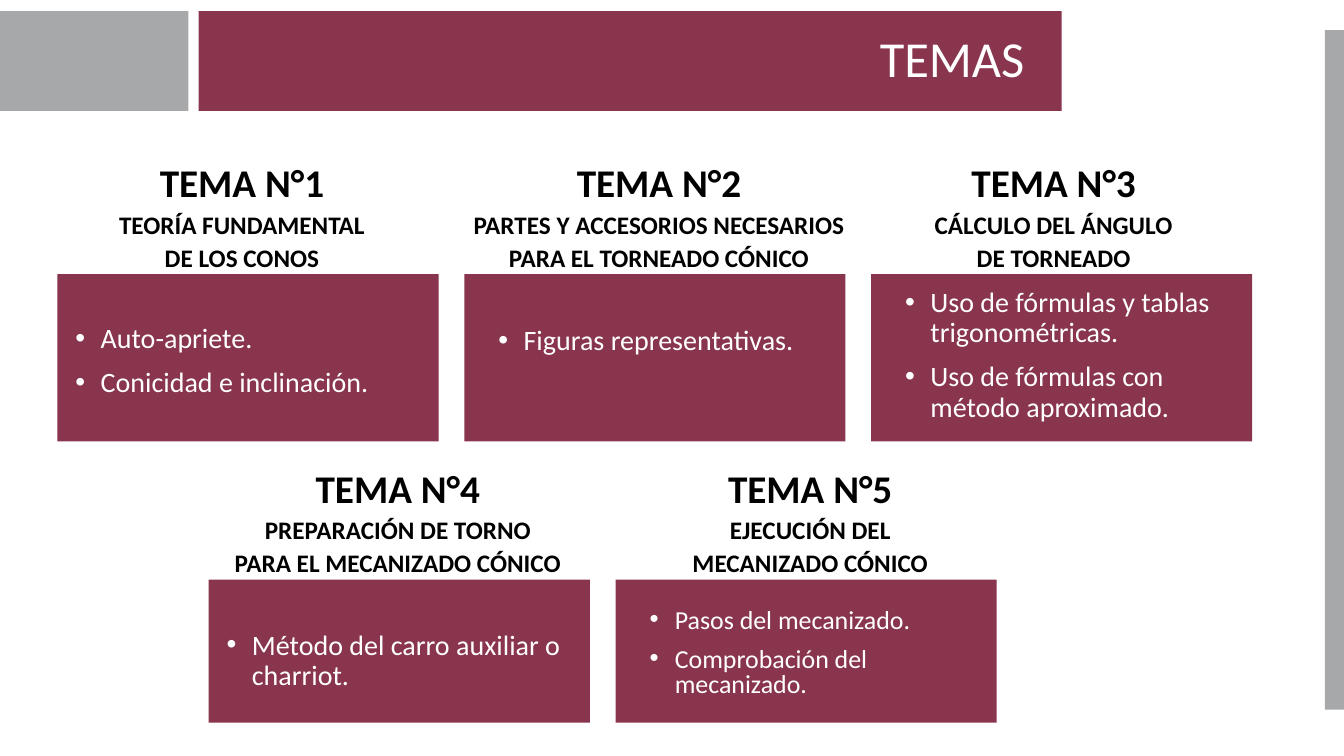
"""Build the course topics slide: a title bar and five topic cards."""
from lxml import etree
from pptx import Presentation
from pptx.dml.color import RGBColor
from pptx.enum.shapes import MSO_SHAPE
from pptx.enum.text import MSO_ANCHOR, MSO_AUTO_SIZE, PP_ALIGN
from pptx.oxml.ns import qn
from pptx.util import Inches, Pt

RECT = MSO_SHAPE.RECTANGLE
MIDDLE = MSO_ANCHOR.MIDDLE
GROW, FIXED = MSO_AUTO_SIZE.SHAPE_TO_FIT_TEXT, MSO_AUTO_SIZE.NONE
CENTER, LEFT, RIGHT = PP_ALIGN.CENTER, PP_ALIGN.LEFT, PP_ALIGN.RIGHT
WINE = RGBColor(0x88, 0x35, 0x4D)
GRAY = RGBColor(0xA7, 0xA8, 0xAA)
WHITE = RGBColor(0xFF, 0xFF, 0xFF)
BLACK = RGBColor(0, 0, 0)
FONT = "Calibri"

WIDE, HIGH = 13.33, 7.5
BAR_TOP, BAR_HIGH = 0.11, 0.99
COL, ROW = 4.035, 3.03
CARD_LEFT, CARD_TOP, CARD_WIDE = 0.57, 2.72, 3.78
HEAD_RISE, HEAD_HIGH = 1.24, 1.27
INDENT = 0.25
ROW_SHIFT = (0, 1.5)
ROW_HIGH = (1.66, 1.42)

# column, row, heading (shift, width), body (shift, drop, width, height), size, spacing, lines, items
TOPICS = [
    (0, 0, (0.35, 2.96), (0.08, 0.45, 3.63, 1.11), 20, 0.9,
     ["TEORÍA FUNDAMENTAL DE LOS CONOS"],
     ["Auto-apriete.", "Conicidad e inclinación."]),
    (1, 0, (-0.03, 3.92), (0.24, 0.47, 3.3, 0.72), 20, 0.9,
     ["PARTES Y ACCESORIOS NECESARIOS PARA EL TORNEADO CÓNICO"],
     ["Figuras representativas."]),
    (2, 0, (0.04, 3.54), (0.24, 0.09, 3.3, 1.56), 20, 0.9,
     ["CÁLCULO DEL ÁNGULO", "DE TORNEADO"],
     ["Uso de fórmulas y tablas trigonométricas.",
      "Uso de fórmulas con método aproximado."]),
    (0, 1, (0.15, 3.45), (0.08, 0.46, 3.63, 0.83), 20, 0.9,
     ["PREPARACIÓN DE TORNO PARA EL MECANIZADO CÓNICO"],
     ["Método del carro auxiliar o charriot."]),
    (1, 1, (-0.03, 3.92), (0.24, 0.25, 3.3, 1.04), 18.5, 0.8,
     ["EJECUCIÓN DEL", "MECANIZADO CÓNICO"],
     ["Pasos del mecanizado.", "Comprobación del mecanizado."]),
]


def add_block(left, top, wide, high, color):
    block = slide.shapes.add_shape(
        RECT, Inches(left), Inches(top), Inches(wide), Inches(high))
    block.shadow.inherit = False
    block.fill.solid()
    block.fill.fore_color.rgb = color
    block.line.fill.background()
    return block


def add_line(frame, index, text, size, color, bold, align, spacing):
    line = frame.paragraphs[0] if index == 0 else frame.add_paragraph()
    line.alignment = align
    line.line_spacing = spacing
    run = line.add_run()
    run.text = text
    run.font.name = FONT
    run.font.size = Pt(size)
    run.font.bold = bold
    run.font.color.rgb = color
    return line


deck = Presentation()
deck.slide_width, deck.slide_height = Inches(WIDE), Inches(HIGH)
slide = deck.slides.add_slide(deck.slide_layouts[5])

title = slide.shapes.title
title.left, title.top = Inches(2.16), Inches(0.33)
title.width, title.height = Inches(8.1), Inches(0.55)
frame = title.text_frame
frame.word_wrap = True
frame.auto_size = FIXED
frame.vertical_anchor = MIDDLE
add_line(frame, 0, "TEMAS", 36, WHITE, False, RIGHT, 0.9)

bar = add_block(1.97, BAR_TOP, 8.56, BAR_HIGH, WINE)
title.element.addprevious(bar.element)
add_block(0, BAR_TOP, 1.87, BAR_HIGH, GRAY)
add_block(WIDE - 0.19, 0.3, 0.19, 6.74, GRAY)

for number, topic in enumerate(TOPICS, 1):
    col, row, head, body, size, spacing, lines, items = topic
    left = CARD_LEFT + ROW_SHIFT[row] + col * COL
    top = CARD_TOP + row * ROW
    add_block(left, top, CARD_WIDE, ROW_HIGH[row], WINE)

    shift, drop, wide, high = body
    box = slide.shapes.add_textbox(
        Inches(left + shift), Inches(top + drop), Inches(wide), Inches(high))
    box.text_frame.word_wrap = True
    for index, item in enumerate(items):
        line = add_line(box.text_frame, index, item, size, WHITE, False, LEFT, spacing)
        line.space_before = Pt(10)
        props = line._p.get_or_add_pPr()
        props.set("marL", str(Inches(INDENT)))
        props.set("indent", str(-Inches(INDENT)))
        etree.SubElement(props, qn("a:buFont"), typeface="Arial")
        etree.SubElement(props, qn("a:buChar"), char="•")

    shift, wide = head
    box = slide.shapes.add_textbox(
        Inches(left + shift), Inches(top - HEAD_RISE), Inches(wide), Inches(HEAD_HIGH))
    box.text_frame.word_wrap = True
    box.text_frame.auto_size = GROW
    add_line(box.text_frame, 0, f"TEMA N°{number}", 28, BLACK, True, CENTER, 1.1)
    for index, text in enumerate(lines, 1):
        add_line(box.text_frame, index, text, 18, BLACK, True, CENTER, 1.1)

deck.save("out.pptx")
